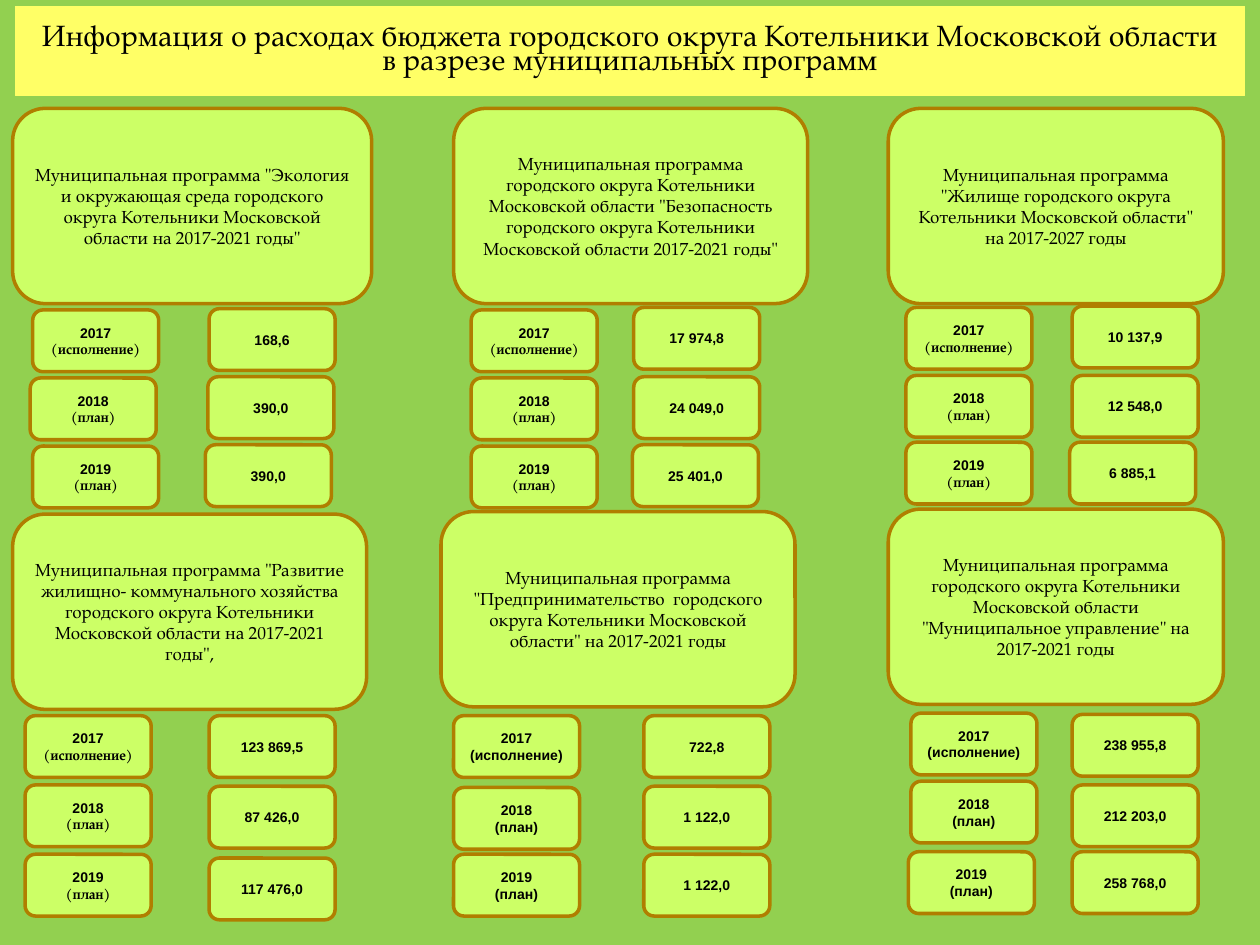
from pptx import Presentation
from pptx.dml.color import RGBColor
from pptx.enum.shapes import MSO_SHAPE
from pptx.enum.text import MSO_ANCHOR, PP_ALIGN
from pptx.util import Inches, Pt

SERIF, SANS = "TeX Gyre Pagella", "Arial"
YEARS = [("2017", "(исполнение)"), ("2018", "(план)"), ("2019", "(план)")]
TITLE = [
    "Информация о расходах бюджета городского округа Котельники Московской области",
    "в разрезе муниципальных программ",
]

# Card left, top, width; card text; font of the year notes;
# then for each year: label left, top, value left, top, value
PLANS = [
    (0.1, 0.86, 2.85,
     'Муниципальная программа "Экология и окружающая среда городского округа '
     'Котельники Московской области на 2017-2021 годы"', SERIF,
     [(0.26, 2.46, 1.66, 2.45, "168,6"),
      (0.24, 3, 1.65, 2.99, "390,0"),
      (0.26, 3.54, 1.63, 3.53, "390,0")]),
    (3.6, 0.86, 2.81,
     'Муниципальная программа городского округа Котельники Московской области '
     '"Безопасность городского округа Котельники Московской области 2017-2021 годы"',
     SERIF,
     [(3.74, 2.46, 5.03, 2.44, "17 974,8"),
      (3.74, 3, 5.03, 2.99, "24 049,0"),
      (3.74, 3.54, 5.02, 3.53, "25 401,0")]),
    (7.05, 0.86, 2.66,
     'Муниципальная программа "Жилище городского округа Котельники '
     'Московской области" на 2017-2027 годы', SERIF,
     [(7.19, 2.44, 8.51, 2.43, "10 137,9"),
      (7.19, 2.98, 8.51, 2.98, "12 548,0"),
      (7.19, 3.51, 8.49, 3.51, "6 885,1")]),
    (0.1, 4.08, 2.81,
     'Муниципальная программа "Развитие жилищно- коммунального хозяйства городского '
     'округа Котельники Московской области на 2017-2021 годы",', SERIF,
     [(0.2, 5.68, 1.66, 5.68, "123 869,5"),
      (0.2, 6.23, 1.66, 6.24, "87 426,0"),
      (0.2, 6.78, 1.66, 6.81, "117 476,0")]),
    (3.5, 4.06, 2.81,
     'Муниципальная программа "Предпринимательство  городского округа Котельники '
     'Московской области" на 2017-2021 годы', SANS,
     [(3.6, 5.68, 5.11, 5.68, "722,8"),
      (3.6, 6.25, 5.11, 6.24, "1 122,0"),
      (3.6, 6.78, 5.11, 6.78, "1 122,0")]),
    (7.05, 4.04, 2.66,
     'Муниципальная программа городского округа Котельники Московской области '
     '"Муниципальное управление" на 2017-2021 годы', SANS,
     [(7.23, 5.66, 8.51, 5.67, "238 955,8"),
      (7.23, 6.2, 8.51, 6.23, "212 203,0"),
      (7.21, 6.76, 8.51, 6.76, "258 768,0")]),
]


def color(code):
    return RGBColor.from_string(code)


class Board:
    back, ink = "92D050", "000000"
    band, fill, edge = "FFFF66", "CCFF66", "B07E00"

    def __init__(self, slide):
        self.slide = slide
        slide.background.fill.solid()
        slide.background.fill.fore_color.rgb = color(self.back)

    def shape(self, kind, box, fill, edge, width):
        shape = self.slide.shapes.add_shape(kind, *map(Inches, box))
        shape.shadow.inherit = False
        shape.fill.solid()
        shape.fill.fore_color.rgb = color(fill)
        shape.line.color.rgb = color(edge)
        shape.line.width = Pt(width)
        return shape

    def label(self, shape, lines, fonts, size, bold=False, space=None):
        """Fill the shape with one paragraph per line, each in its own font."""
        frame = shape.text_frame
        frame.text = "\n".join(lines)
        frame.word_wrap = True
        frame.vertical_anchor = MSO_ANCHOR.MIDDLE
        for para, name in zip(frame.paragraphs, fonts):
            para.alignment = PP_ALIGN.CENTER
            para.line_spacing = space
            for run in para.runs:
                run.font.name = name
                run.font.size = Pt(size)
                run.font.bold = bold
                run.font.color.rgb = color(self.ink)

    def title(self, lines):
        shape = self.shape(MSO_SHAPE.RECTANGLE, (0.12, 0.05, 9.76, 0.71),
                           self.band, self.band, 0.5)
        self.label(shape, lines, [SERIF] * len(lines), 16.8, space=0.7)

    def panel(self, box):
        return self.shape(MSO_SHAPE.ROUNDED_RECTANGLE, box, self.fill, self.edge, 2)

    def card(self, left, top, width, text):
        self.label(self.panel((left, top, width, 1.55)), [text], [SERIF], 10)

    def cell(self, left, top, lines, fonts):
        self.label(self.panel((left, top, 1, 0.49)), lines, fonts, 8, bold=True)


def main():
    deck = Presentation()
    deck.slide_width, deck.slide_height = Inches(10), Inches(7.5)
    board = Board(deck.slides.add_slide(deck.slide_layouts[6]))
    board.title(TITLE)
    for left, top, width, text, *_ in PLANS:
        board.card(left, top, width, text)
    for *_, note, rows in PLANS:
        for year, (left, top, right, level, value) in zip(YEARS, rows):
            board.cell(left, top, year, [SANS, note])
            board.cell(right, level, [value], [SANS])
    deck.save("out.pptx")


if __name__ == "__main__":
    main()
